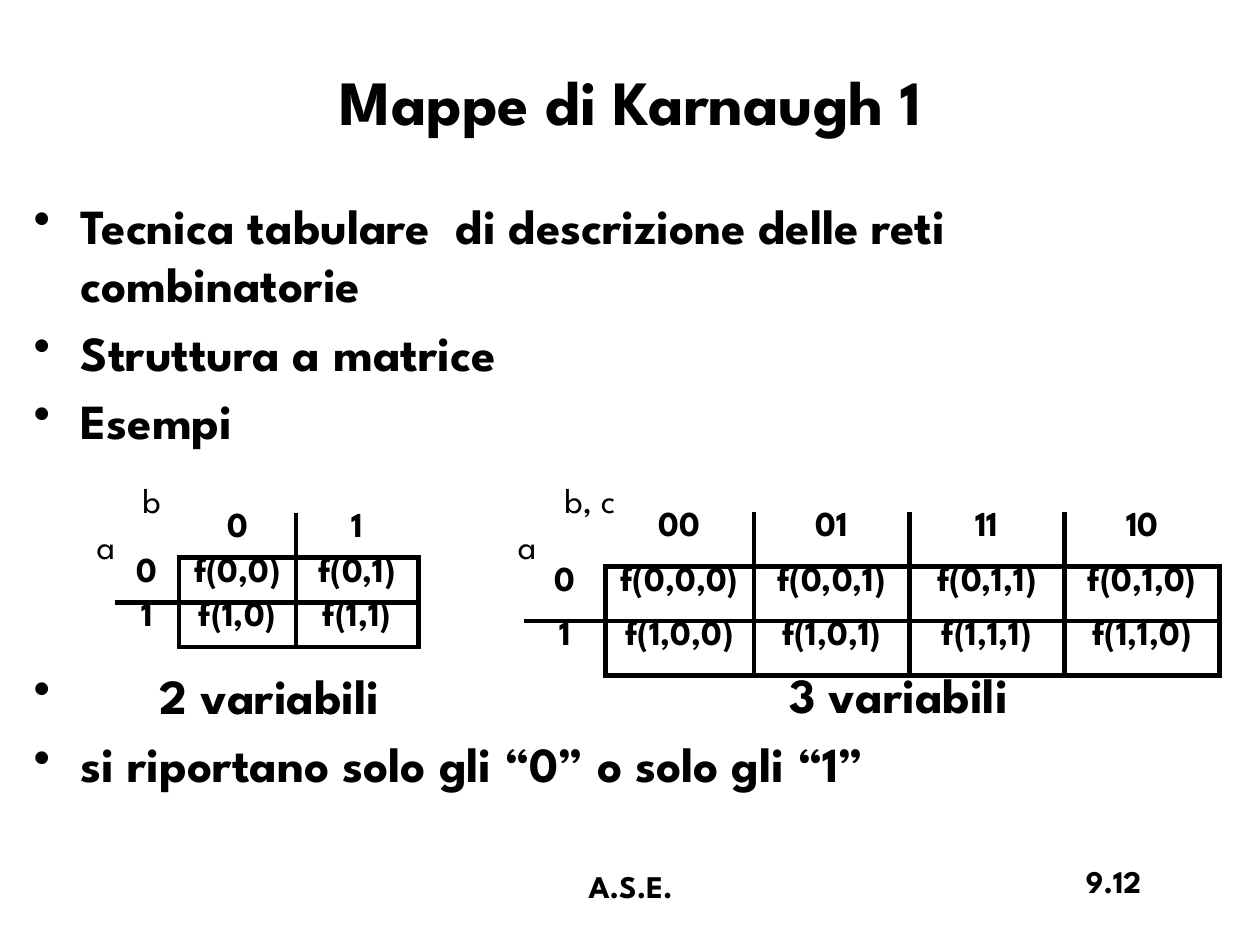
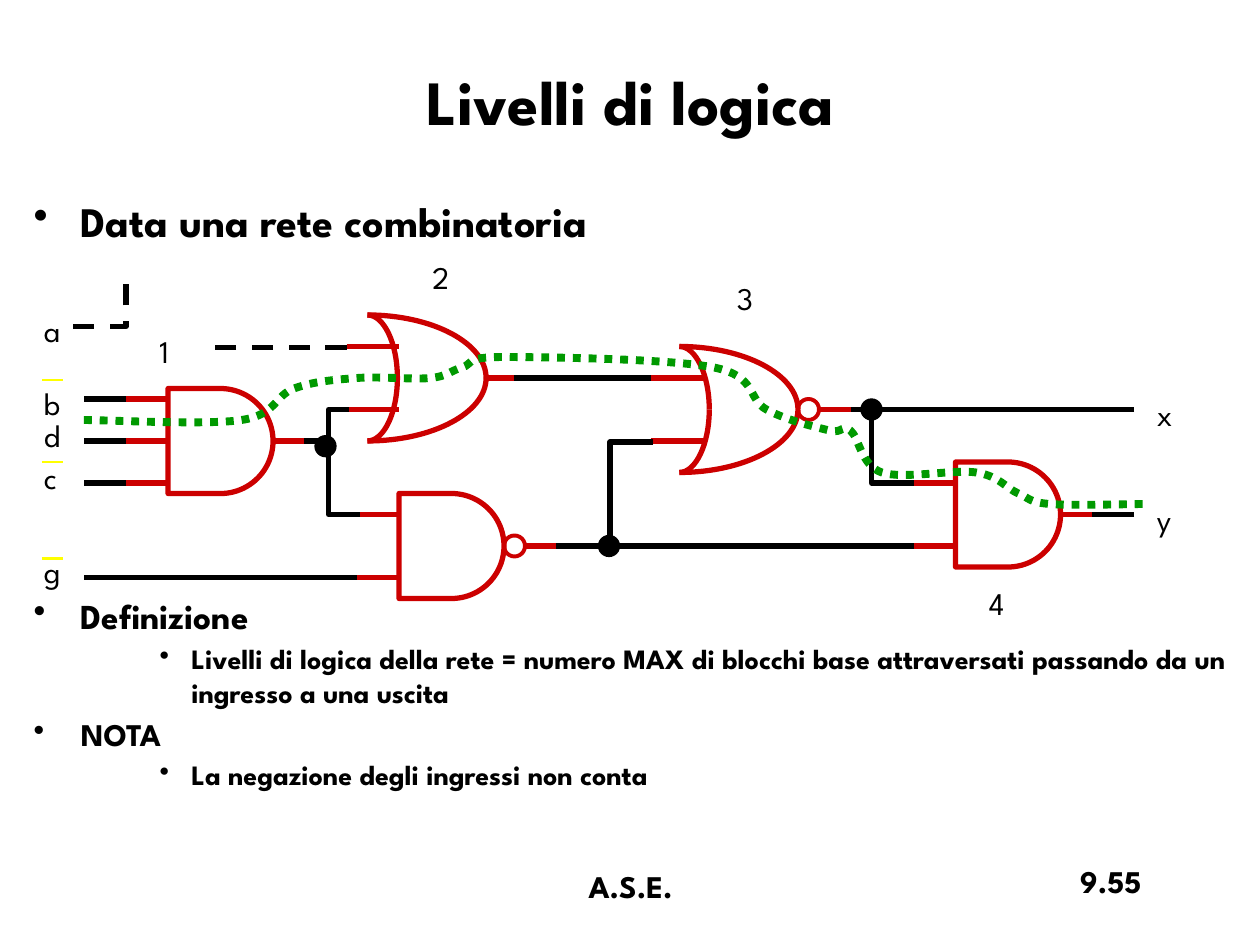
from itertools import pairwise

from lxml import etree
from pptx import Presentation
from pptx.dml.color import RGBColor
from pptx.enum.dml import MSO_LINE
from pptx.enum.shapes import MSO_CONNECTOR, MSO_SHAPE
from pptx.enum.text import MSO_ANCHOR, PP_ALIGN
from pptx.oxml.ns import qn
from pptx.util import Cm, Pt

BLACK = RGBColor(0x00, 0x00, 0x00)
GATE_RED = RGBColor(0xCC, 0x00, 0x00)
PATH_GREEN = RGBColor(0x00, 0x99, 0x00)
BAR_YELLOW = RGBColor(0xFF, 0xFF, 0x00)
FONT = "League Spartan"

LEFT, CENTER, RIGHT = PP_ALIGN.LEFT, PP_ALIGN.CENTER, PP_ALIGN.RIGHT
TOP, MIDDLE = MSO_ANCHOR.TOP, MSO_ANCHOR.MIDDLE
DASH, DOTS = MSO_LINE.DASH, MSO_LINE.ROUND_DOT
STRAIGHT = MSO_CONNECTOR.STRAIGHT
AND_BODY, CIRCLE = MSO_SHAPE.FLOWCHART_DELAY, MSO_SHAPE.OVAL

GRID = Cm(2.54) / 12  # step of the circuit drawing
GATE = 10             # side of an AND gate, in steps

TITLE_BOX = (0.43, 0.43, 24.56, 3.18)
BODY_BOX = (0.43, 3.81, 24.56, 13.13)
NUMBER_BOX = (17.98, 17.25, 5.28, 1.27)
FOOTER_BOX = (8.69, 17.35, 8.05, 1.27)


def write(paragraph, text, size=18, bold=False, align=LEFT, before=0):
    paragraph.alignment = align
    paragraph.space_before = Pt(before)
    run = paragraph.add_run()
    run.text = text
    run.font.name = FONT
    run.font.size = Pt(size)
    run.font.bold = bold
    run.font.color.rgb = BLACK


def add_frame(slide, box, anchor=TOP, wrap=True):
    frame = slide.shapes.add_textbox(*map(Cm, box)).text_frame
    frame.word_wrap = wrap
    frame.vertical_anchor = anchor
    return frame


def add_text(slide, box, text, anchor=TOP, wrap=True, **text_format):
    write(add_frame(slide, box, anchor, wrap).paragraphs[0], text, **text_format)


def add_bullets(slide, items):
    """Items are (text, size, extra gap in points, text indent, hanging)."""
    frame = add_frame(slide, BODY_BOX)
    for index, (text, size, gap, indent, hanging) in enumerate(items):
        paragraph = frame.add_paragraph() if index else frame.paragraphs[0]
        write(paragraph, text, size=size, bold=True, before=size * 0.19 + gap)
        properties = paragraph._p.get_or_add_pPr()
        properties.set("marL", str(Cm(indent)))
        properties.set("indent", str(-Cm(hanging)))
        etree.SubElement(properties, qn("a:buFontTx"))
        etree.SubElement(properties, qn("a:buChar"), char="•")


def add_base_slide(deck, title, number):
    """Blank slide with the title, page number and footer all slides share."""
    slide = deck.slides.add_slide(deck.slide_layouts[6])
    add_text(slide, TITLE_BOX, title, anchor=MIDDLE, size=36, bold=True, align=CENTER)
    add_text(slide, NUMBER_BOX, number, bold=True, align=RIGHT)
    add_text(slide, FOOTER_BOX, "A.S.E.", bold=True, align=CENTER)
    return slide


def set_borders(cell, sides):
    properties = cell._tc.get_or_add_tcPr()
    for index, (side, ruled) in enumerate(sides.items()):
        border = etree.Element(qn(f"a:ln{side}"), w=str(Pt(3) if ruled else 0))
        if ruled:
            fill = etree.SubElement(border, qn("a:solidFill"))
            etree.SubElement(fill, qn("a:srgbClr"), val=str(BLACK))
        else:
            etree.SubElement(border, qn("a:noFill"))
        properties.insert(index, border)


def is_ruled(lane, edge, count):
    """Header lanes have only inner rules; the others are closed."""
    return edge > 0 and (lane > 0 or 1 < edge < count)


def add_karnaugh_map(slide, left, top, widths, row_height, codes):
    rows = [["", *codes]]
    for a in "01":
        rows.append([a, *(f"f({','.join((a, *code))})" for code in codes)])
    height, width = len(rows), len(widths)
    table = slide.shapes.add_table(height, width, Cm(left), Cm(top), Cm(sum(widths)),
                                   Cm(row_height * height)).table
    table.first_row = table.horz_banding = False
    for column, column_width in zip(table.columns, widths):
        column.width = Cm(column_width)
    for r, texts in enumerate(rows):
        table.rows[r].height = Cm(row_height)
        for c, text in enumerate(texts):
            cell = table.cell(r, c)
            cell.margin_left = cell.margin_right = 0
            cell.margin_top = cell.margin_bottom = 0
            cell.fill.background()
            write(cell.text_frame.paragraphs[0], text, size=20, bold=True,
                  align=CENTER, before=4)
            set_borders(cell, {"L": is_ruled(r, c, width),
                               "R": is_ruled(r, c + 1, width),
                               "T": is_ruled(c, r, height),
                               "B": is_ruled(c, r + 1, height)})


def steps(*values):
    return [round(value * GRID) for value in values]


def add_outline(slide, points):
    start, *others = [steps(*point) for point in points]
    builder = slide.shapes.build_freeform(*start)
    builder.add_line_segments(others, close=False)
    outline = builder.convert_to_shape()
    outline.fill.background()
    return outline


def set_stroke(stroke, color, width, dash):
    stroke.line.color.rgb = color
    stroke.line.width = Pt(width)
    if dash:
        stroke.line.dash_style = dash
    etree.SubElement(stroke._element.spPr, qn("a:effectLst"))


def add_wire(slide, *points, color=BLACK, width=3, dash=None):
    """Connector between two grid points, or an open outline through more."""
    if len(points) == 2:
        start, end = points
        wire = slide.shapes.add_connector(STRAIGHT, *steps(*start), *steps(*end))
    else:
        wire = add_outline(slide, points)
    set_stroke(wire, color, width, dash)


def add_curve(slide, *points, color=GATE_RED, width=3, dash=None):
    """Bézier curve: a start, then two control points and an end per segment."""
    curve = add_outline(slide, points)
    drawing = curve._element.find(f".//{qn('a:path')}")
    lines = drawing.findall(qn("a:lnTo"))
    for first in range(0, len(lines), 3):
        segment = etree.SubElement(drawing, qn("a:cubicBezTo"))
        for line in lines[first:first + 3]:
            segment.append(line[0])
            drawing.remove(line)
    set_stroke(curve, color, width, dash)


def smooth(knots):
    """Bézier points of the Catmull-Rom curve through the knots."""
    padded = [knots[0], *knots, knots[-1]]
    points = [knots[0]]
    for (before, start), (end, after) in zip(pairwise(padded), pairwise(padded[2:])):
        points.append(tuple(q + (r - p) / 6 for p, q, r in zip(before, start, end)))
        points.append(tuple(r - (s - q) / 6 for q, r, s in zip(start, end, after)))
        points.append(end)
    return points


def add_body(slide, kind, x, y, size, line=GATE_RED, width=3.0, fill=None):
    body = slide.shapes.add_shape(kind, *steps(x, y, size, size))
    body.shadow.inherit = False
    body.line.color.rgb = line
    body.line.width = Pt(width)
    if fill is None:
        body.fill.background()
    else:
        body.fill.solid()
        body.fill.fore_color.rgb = fill


def add_output(slide, x, y, negated):
    if negated:
        add_body(slide, CIRCLE, x, y - 1, 2, width=2.25)
        x += 2
    add_wire(slide, (x, y), (x + 3.5, y), color=GATE_RED)


def add_and_gate(slide, x, y, inputs, negated=False):
    add_body(slide, AND_BODY, x, y, GATE)
    for offset in inputs:
        add_wire(slide, (x - 4, y + offset), (x, y + offset), color=GATE_RED)
    add_output(slide, x + GATE, y + GATE / 2, negated)


def add_or_gate(slide, x, y, input_x, negated=False):
    """Front and back are quarter ellipses around (x, y)."""
    for depth in (11.3, 2.85):
        for rise in (-6, 6):
            add_curve(slide, (x, y + rise), (x + 0.55 * depth, y + rise),
                      (x + depth, y + 0.55 * rise), (x + depth, y))
    for level in (y - 3, y + 3):
        add_wire(slide, (input_x, level), (input_x + 5, level), color=GATE_RED)
    add_output(slide, x + 11.3, y, negated)


def build_karnaugh(deck):
    slide = add_base_slide(deck, "Mappe di Karnaugh 1", "9.12")
    add_bullets(slide, [
        ("Tecnica tabulare  di descrizione delle reti combinatorie", 28, 0, 0.95, 0.95),
        ("Struttura a matrice", 28, 0, 0.95, 0.95),
        ("Esempi", 28, 0, 0.95, 0.95),
        ("2 variabili", 28, 118.5, 2.54, 2.54),
        ("si riportano solo gli “0” o solo gli “1”", 28, 0, 0.95, 0.95),
    ])
    add_text(slide, (15.67, 13.28, 7, 1.5), "3 variabili", size=28, bold=True, before=6)
    add_karnaugh_map(slide, 2.31, 10.34, [1.3, 2.36, 2.46], 0.9, ["0", "1"])
    add_karnaugh_map(slide, 10.57, 10.32, [1.63, 3, 3.13, 3.13, 3.13], 1.1,
                     ["00", "01", "11", "10"])
    for variables, left, top, width in [("b", 2.62, 9.53, 0.97), ("a", 1.7, 10.44, 0.94),
                                        ("b, c", 11.13, 9.53, 1.78),
                                        ("a", 10.19, 10.44, 0.94)]:
        add_text(slide, (left, top, width, 1.09), variables, wrap=False, size=20)


def build_logic_levels(deck):
    slide = add_base_slide(deck, "Livelli di logica", "9.55")
    add_bullets(slide, [
        ("Data una rete combinatoria", 24, 0, 0.95, 0.95),
        ("Definizione", 20, 195.5, 0.95, 0.95),
        ("Livelli di logica della rete = numero MAX di blocchi base attraversati "
         "passando da un ingresso a una uscita", 16, 0, 3.18, 0.64),
        ("NOTA", 18, 0, 0.95, 0.95),
        ("La negazione degli ingressi non conta", 16, 0, 3.18, 0.64),
    ])

    add_and_gate(slide, 16, 37, inputs=(1, 5, 9))
    add_or_gate(slide, 35, 36, input_x=33)
    add_and_gate(slide, 38, 47, inputs=(2, 8), negated=True)
    add_or_gate(slide, 64.7, 39, input_x=62, negated=True)
    add_and_gate(slide, 91, 44, inputs=(2, 8))

    for start, end, y in [(12, 8, 38), (12, 8, 42), (12, 8, 46), (62, 49, 36),
                          (34, 8, 55), (87, 53, 52), (31, 29, 42),
                          (108, 81, 39), (108, 104, 49)]:
        add_wire(slide, (start, y), (end, y))
    add_wire(slide, (33, 33.1), (20, 33.1), dash=DASH)
    add_wire(slide, (7, 31.1), (12, 31.1), (12, 26.1), dash=DASH)
    add_wire(slide, (33.2, 39), (31.3, 39), (31.3, 49), (34.3, 49))
    add_wire(slide, (62.2, 42.1), (58.1, 42.1), (58.1, 52.2))
    add_wire(slide, (83, 39), (83, 46), (87, 46))
    for x, y in [(30, 41.5), (57, 51), (82, 38)]:
        add_body(slide, CIRCLE, x, y, 2, line=BLACK, width=0.75, fill=BLACK)
    for y in (36.2, 44, 53.2):
        add_wire(slide, (4, y), (6, y), color=BAR_YELLOW, width=1.5)

    longest_path = [(8, 40), (23, 40), (28, 37), (34, 36), (41, 36), (44, 35),
                    (48, 34), (68, 35), (73, 39), (79, 41), (81, 41), (84, 45),
                    (93, 45), (97, 47), (100, 48), (109, 48)]
    add_curve(slide, *smooth(longest_path), color=PATH_GREEN, width=4.5, dash=DOTS)

    for signal, x, y in [("a", 3, 29), ("b", 3, 36), ("d", 3, 39), ("c", 3, 43),
                         ("g", 3, 52), ("x", 109, 37), ("y", 109, 47),
                         ("1", 14, 31), ("2", 40, 24), ("3", 69, 26), ("4", 93, 55)]:
        box = [2.54 * step / 12 for step in (x, y, 4.2, 4.8)]
        add_text(slide, box, signal, wrap=False)


def main():
    deck = Presentation()
    deck.slide_width, deck.slide_height = Cm(25.4), Cm(19.05)
    build_karnaugh(deck)
    build_logic_levels(deck)
    deck.save("out.pptx")


if __name__ == "__main__":
    main()
